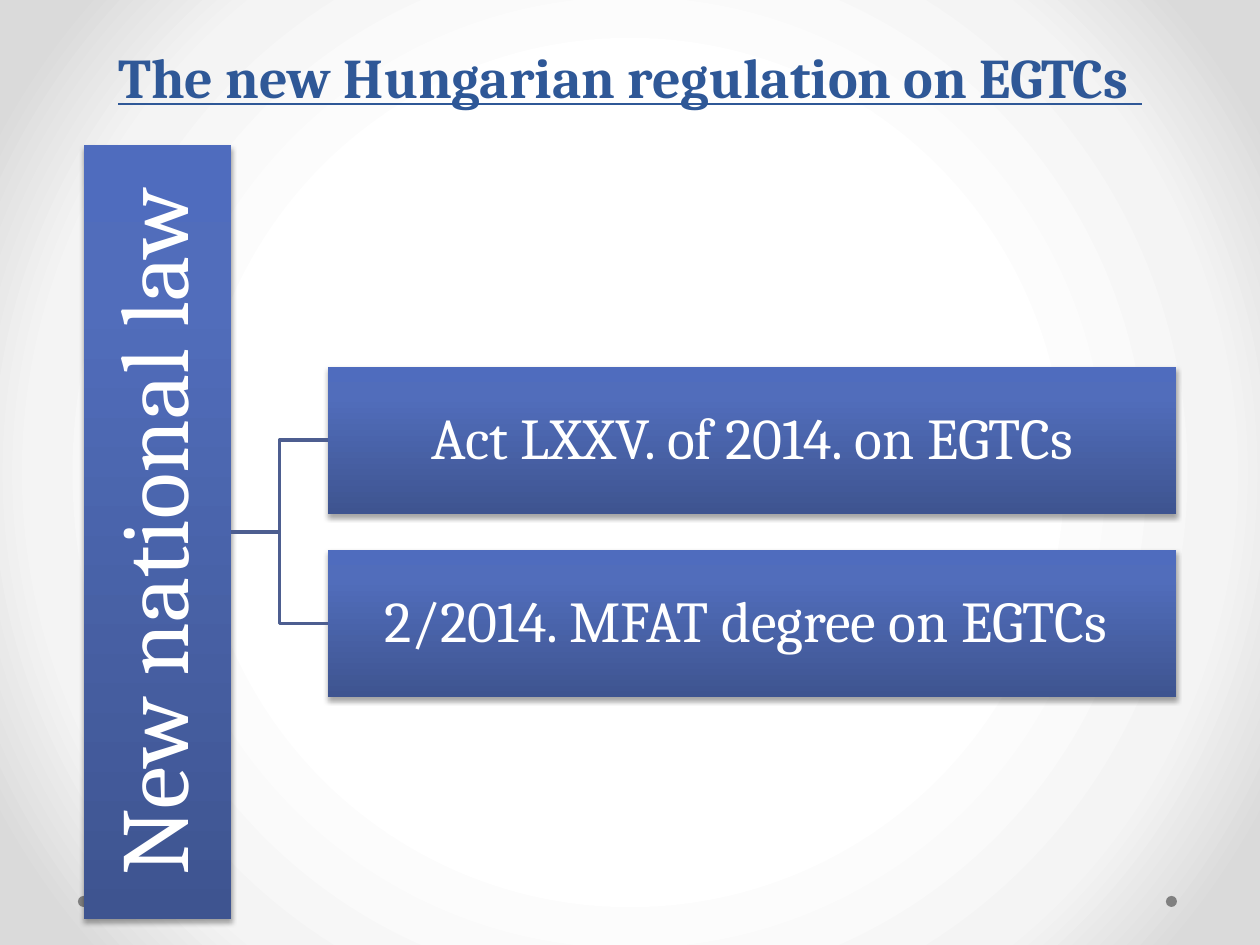
import pptx
import pptx.util
import pptx.dml.color
import pptx.enum.shapes
import pptx.enum.text
import pptx.oxml
import pptx.oxml.ns

FONT = "Cambria"
NS = 'xmlns:a="http://schemas.openxmlformats.org/drawingml/2006/main"'
SHAPE = pptx.enum.shapes.MSO_SHAPE
ANCHOR = pptx.enum.text.MSO_ANCHOR
LINEAR = '<a:lin ang="16200000" scaled="0"/>'
RADIAL = ('<a:path path="circle">'
          '<a:fillToRect l="50000" t="50000" r="50000" b="50000"/></a:path>')
PAGE = [(50, "FFFFFF"), (76, "F4F4F4"), (92, "DADADA")]
BLUE = [(0, "3E5490"), (80, "516DBB"), (100, "4F6CBE")]


def px(n):
    return pptx.util.Emu(round(n * 914400 / 126))


def rgb(code):
    return pptx.dml.color.RGBColor.from_string(code)


def blend(fill, root, stops, mode):
    """Fill with a gradient; root is the element that holds the fill."""
    fill.solid()
    marks = "".join(f'<a:gs pos="{pos * 1000}"><a:srgbClr val="{code}"/></a:gs>'
                    for pos, code in stops)
    grad = pptx.oxml.parse_xml(
        f'<a:gradFill {NS} rotWithShape="1"><a:gsLst>{marks}</a:gsLst>{mode}</a:gradFill>')
    old = root.find(".//" + pptx.oxml.ns.qn("a:solidFill"))
    old.getparent().replace(old, grad)


def shade(shape):
    """Give the shape a soft shadow below it."""
    shape.shadow.inherit = False
    glow = shape._element.spPr.find(pptx.oxml.ns.qn("a:effectLst"))
    glow.append(pptx.oxml.parse_xml(
        f'<a:outerShdw {NS} blurRad="39370" dist="22860" dir="5400000" rotWithShape="0">'
        '<a:srgbClr val="000000"><a:alpha val="35000"/></a:srgbClr></a:outerShdw>'))


def write(shape, text, size, code, anchor, space):
    frame = shape.text_frame
    frame.text = text
    frame.word_wrap = True
    frame.vertical_anchor = anchor
    line = frame.paragraphs[0]
    line.alignment = pptx.enum.text.PP_ALIGN.CENTER
    line.line_spacing = space
    font = line.runs[0].font
    font.name, font.size = FONT, pptx.util.Pt(size)
    font.color.rgb = rgb(code)
    return font


def add_title(slide, text):
    title = slide.shapes.title
    title.left, title.top, title.width, title.height = map(px, (63, 16, 1134, 100))
    font = write(title, text, 32, "2F5897", ANCHOR.BOTTOM, pptx.util.Pt(58))
    font.bold = font.underline = True


def add_dot(slide, left):
    dot = slide.shapes.add_shape(SHAPE.OVAL, px(left), px(896), px(11), px(11))
    dot.fill.solid()
    dot.fill.fore_color.rgb = rgb("808080")
    dot.line.fill.background()
    dot.shadow.inherit = False


def add_box(slide, area, text, size, inset):
    box = slide.shapes.add_shape(SHAPE.RECTANGLE, *map(px, area))
    blend(box.fill, box._element.spPr, BLUE, LINEAR)
    box.line.fill.background()
    shade(box)
    write(box, text, size, "FFFFFF", ANCHOR.MIDDLE, 0.9)
    frame = box.text_frame
    frame.margin_left = frame.margin_right = px(inset)
    frame.margin_top = frame.margin_bottom = px(inset)
    return box


def link(slide, start, end):
    """Join the right side of start to the left side of end."""
    line = slide.shapes.add_connector(
        pptx.enum.shapes.MSO_CONNECTOR.ELBOW, 0, 0, 0, 0)
    line.begin_connect(start, 3)
    line.end_connect(end, 1)
    line.line.color.rgb = rgb("4D5E90")
    line.line.width = pptx.util.Pt(2.25)
    line._element.spPr.append(pptx.oxml.parse_xml(f"<a:effectLst {NS}/>"))


def main():
    deck = pptx.Presentation()
    deck.slide_width, deck.slide_height = px(1260), px(945)
    slide = deck.slides.add_slide(deck.slide_layouts[5])

    # Page and heading
    blend(slide.background.fill, slide._element, PAGE, RADIAL)
    for left in (1166, 78):
        add_dot(slide, left)
    add_title(slide, "The new Hungarian regulation on EGTCs ")

    # Root bar, its text reading upwards
    root = add_box(slide, (84, 145, 147, 774), "New national law", 55, 5)
    root.text_frame._txBody.bodyPr.set("vert", "vert270")

    # Branches, evenly spaced and linked to the root
    laws = ["Act LXXV. of 2014. on EGTCs", "2/2014. MFAT degree on EGTCs "]
    for row, law in enumerate(laws):
        box = add_box(slide, (328, 367 + 183 * row, 848, 147), law, 33, 3)
        link(slide, root, box)

    deck.save("out.pptx")


if __name__ == "__main__":
    main()
